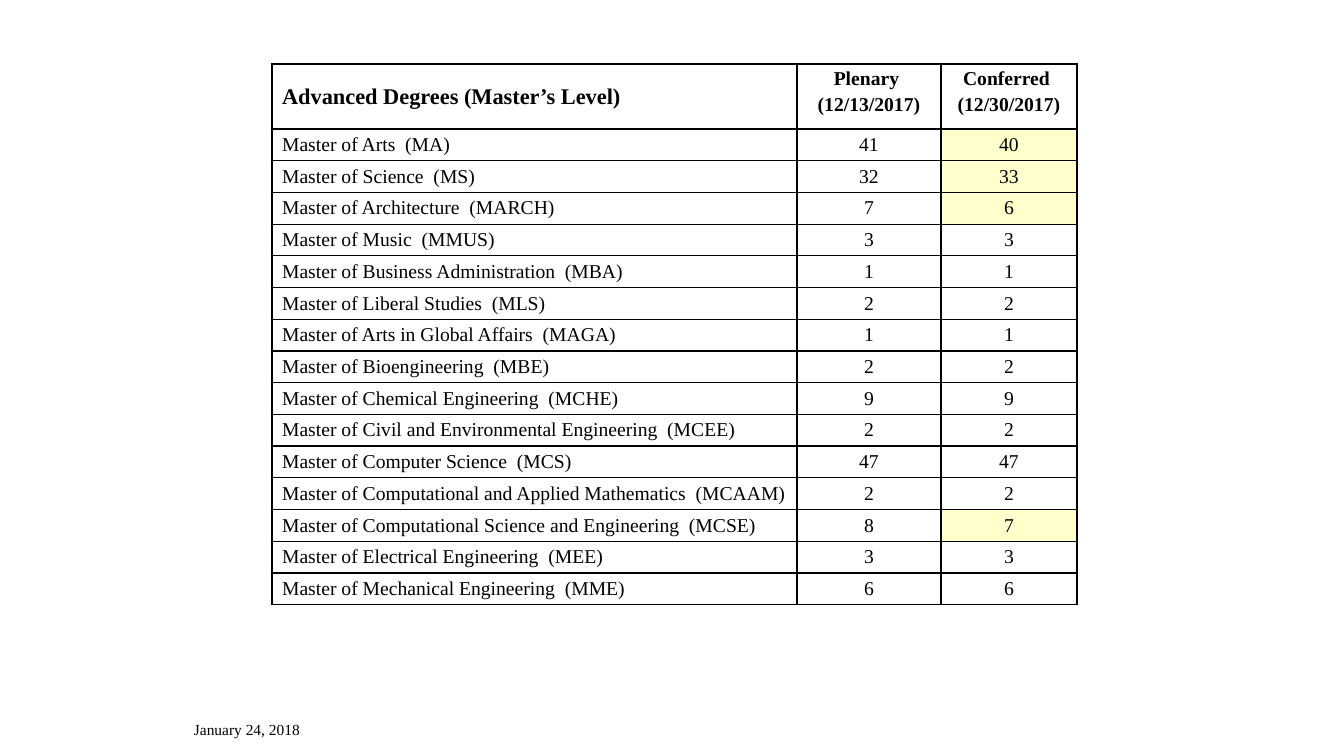
from collections import namedtuple
from dataclasses import dataclass

from lxml.etree import SubElement
from pptx import Presentation
from pptx.dml.color import RGBColor as Color
from pptx.enum.text import MSO_ANCHOR as Anchor, PP_ALIGN as Align
from pptx.oxml.ns import qn
from pptx.util import Pt

PX = 9071  # EMU in one px, at 100.8 px to the inch
Box = namedtuple("Box", "left top width height")


@dataclass(frozen=True)
class Theme:
    font: str = "Times New Roman"
    ink: str = "000000"
    changed: str = "FFFFCC"
    title_size: int = 16
    body_size: int = 14
    date_size: int = 11
    thick: float = 2.25
    thin: float = 1


THEME = Theme()
COLUMNS = [525, 144, 136]
HEADER_HEIGHT = 65
HEADER = ["Advanced Degrees (Master’s Level)",
          "Plenary \n(12/13/2017)", "Conferred \n(12/30/2017)"]
# Degree, plenary count, conferred count
DEGREES = [
    ("Master of Arts  (MA)", 41, 40),
    ("Master of Science  (MS)", 32, 33),
    ("Master of Architecture  (MARCH)", 7, 6),
    ("Master of Music  (MMUS)", 3, 3),
    ("Master of Business Administration  (MBA)", 1, 1),
    ("Master of Liberal Studies  (MLS)", 2, 2),
    ("Master of Arts in Global Affairs  (MAGA)", 1, 1),
    ("Master of Bioengineering  (MBE)", 2, 2),
    ("Master of Chemical Engineering  (MCHE)", 9, 9),
    ("Master of Civil and Environmental Engineering  (MCEE)", 2, 2),
    ("Master of Computer Science  (MCS)", 47, 47),
    ("Master of Computational and Applied Mathematics  (MCAAM)", 2, 2),
    ("Master of Computational Science and Engineering  (MCSE)", 8, 7),
    ("Master of Electrical Engineering  (MEE)", 3, 3),
    ("Master of Mechanical Engineering  (MME)", 6, 6),
]


def scaled(box):
    return [length * PX for length in box]


def write(frame, text, size, bold=False, align=Align.LEFT):
    frame.text = text
    for index, para in enumerate(frame.paragraphs):
        para.alignment = align
        if index:
            para.space_before = Pt(size * 0.2)
        for span in para.runs:
            span.font.name = THEME.font
            span.font.size = Pt(size)
            span.font.bold = bold
            span.font.color.rgb = Color.from_string(THEME.ink)


def set_borders(cell, widths):
    properties = cell._tc.get_or_add_tcPr()
    for side, width in widths.items():
        line = SubElement(properties, qn(f"a:ln{side}"), w=str(int(Pt(width))))
        fill = SubElement(line, qn("a:solidFill"))
        SubElement(fill, qn("a:srgbClr"), val=THEME.ink)


def fill_cell(cell, text, row, column):
    is_header = row == 0
    is_title = is_header and column == 0
    # Thick frame and header rule, thin lines inside
    thick_sides = {"L": column == 0, "R": column == len(COLUMNS) - 1,
                   "T": row < 2, "B": is_header}
    set_borders(cell, {side: THEME.thick if thick else THEME.thin
                       for side, thick in thick_sides.items()})
    cell.margin_top = cell.margin_bottom = 4 * PX
    cell.vertical_anchor = Anchor.TOP if is_header and column else Anchor.MIDDLE
    write(cell.text_frame, text,
          THEME.title_size if is_title else THEME.body_size,
          bold=is_header, align=Align.CENTER if column else Align.LEFT)
    cell.fill.background()


def add_degree_table(page, box):
    rows = [HEADER, *DEGREES]
    table = page.shapes.add_table(len(rows), len(COLUMNS), *scaled(box)).table
    table.first_row = table.horz_banding = False
    for column, width in zip(table.columns, COLUMNS):
        column.width = width * PX
    body_height = (box.height - HEADER_HEIGHT) * PX // len(DEGREES)
    for r, values in enumerate(rows):
        table.rows[r].height = body_height if r else HEADER_HEIGHT * PX
        for c, value in enumerate(values):
            fill_cell(table.cell(r, c), str(value), r, c)
        # Mark counts that changed since the plenary
        if r and values[1] != values[2]:
            fill = table.cell(r, 2).fill
            fill.solid()
            fill.fore_color.rgb = Color.from_string(THEME.changed)


def add_date(page, box):
    frame = page.shapes.add_textbox(*scaled(box)).text_frame
    frame.word_wrap = True
    frame.vertical_anchor = Anchor.MIDDLE
    write(frame, "January 24, 2018", THEME.date_size)


def main():
    deck = Presentation()
    deck.slide_width, deck.slide_height = 1344 * PX, 756 * PX
    page = deck.slides.add_slide(deck.slide_layouts[6])
    add_degree_table(page, Box(272, 64, sum(COLUMNS), 541))
    add_date(page, Box(184, 712, 235, 35))
    deck.save("out.pptx")


if __name__ == "__main__":
    main()
